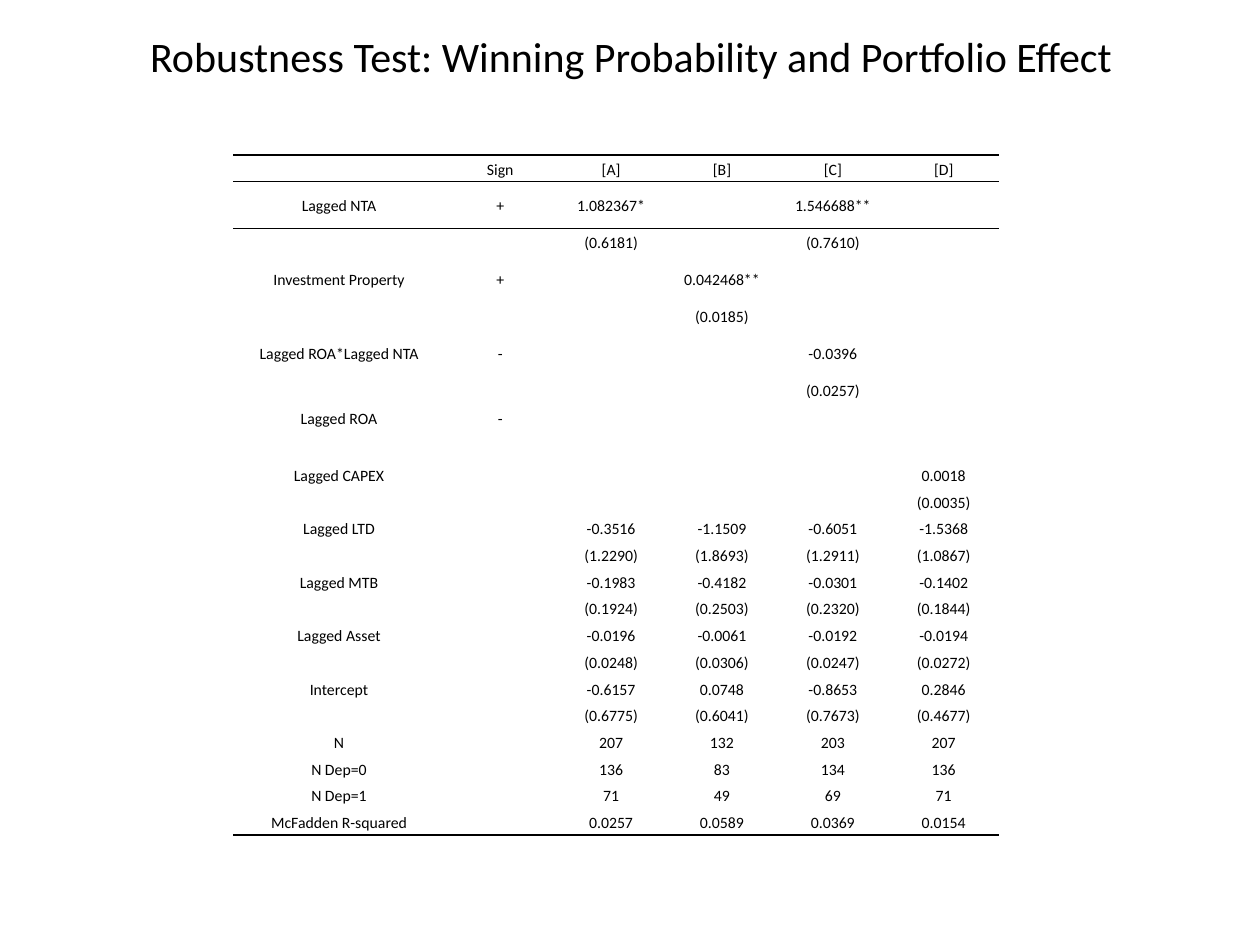
from dataclasses import dataclass

from lxml.etree import SubElement
from pptx import Presentation
from pptx.dml.color import RGBColor
from pptx.enum.text import MSO_ANCHOR as Anchor, PP_ALIGN as Align
from pptx.oxml.ns import qn
from pptx.util import Inches, Pt

W, H = Inches(10), Inches(7.5)
FONT, BLACK = "Calibri", "000000"
NO_STYLE = "{2D5ABB26-0587-4C30-8999-92F81FD0307C}"
COLS = (1.68, 0.88, 0.88, 0.88, 0.88, 0.88)
TABLE_HEIGHT = Inches(5.4)
TALL, MEDIUM = 1.76, 1.1


@dataclass
class Row:
    """One table row; height is a multiple of the regular row."""
    label: str = ""
    sign: str = ""
    values: tuple = ("", "", "", "")
    height: float = 1

    def cells(self) -> tuple:
        """Return the row's texts from left to right."""
        return (self.label, self.sign, *self.values)


ROWS = [
    Row("", "Sign", ("[A]", "[B]", "[C]", "[D]")),
    Row("Lagged NTA", "+", ("1.082367*", "", "1.546688**", ""), TALL),
    Row(values=("(0.6181)", "", "(0.7610)", "")),
    Row("Investment Property", "+", ("", "0.042468**", "", ""), TALL),
    Row(values=("", "(0.0185)", "", "")),
    Row("Lagged ROA*Lagged NTA", "-", ("", "", "-0.0396", ""), TALL),
    Row(values=("", "", "(0.0257)", "")),
    Row("Lagged ROA", "-", height=MEDIUM),
    Row(height=MEDIUM),
    Row("Lagged CAPEX", "", ("", "", "", "0.0018")),
    Row(values=("", "", "", "(0.0035)")),
    Row("Lagged LTD", "", ("-0.3516", "-1.1509", "-0.6051", "-1.5368")),
    Row(values=("(1.2290)", "(1.8693)", "(1.2911)", "(1.0867)")),
    Row("Lagged MTB", "", ("-0.1983", "-0.4182", "-0.0301", "-0.1402")),
    Row(values=("(0.1924)", "(0.2503)", "(0.2320)", "(0.1844)")),
    Row("Lagged Asset", "", ("-0.0196", "-0.0061", "-0.0192", "-0.0194")),
    Row(values=("(0.0248)", "(0.0306)", "(0.0247)", "(0.0272)")),
    Row("Intercept", "", ("-0.6157", "0.0748", "-0.8653", "0.2846")),
    Row(values=("(0.6775)", "(0.6041)", "(0.7673)", "(0.4677)")),
    Row("N", "", ("207", "132", "203", "207")),
    Row("N Dep=0", "", ("136", "83", "134", "136")),
    Row("N Dep=1", "", ("71", "49", "69", "71")),
    Row("McFadden R-squared", "", ("0.0257", "0.0589", "0.0369", "0.0154")),
]


def rgb(value: str) -> RGBColor:
    """Turn a hex string into a colour."""
    return RGBColor.from_string(value)


def format_text(tf, size: float) -> None:
    """Centre the text of a frame and set its font."""
    for p in tf.paragraphs:
        p.alignment = Align.CENTER
        for r in p.runs:
            r.font.name, r.font.size, r.font.bold = FONT, Pt(size), False
            r.font.color.rgb = rgb(BLACK)


def add_border(cell, side: str) -> None:
    """Rule one side of a cell; side is T or B."""
    ln = SubElement(cell._tc.get_or_add_tcPr(), qn(f"a:ln{side}"), w=str(Pt(1)))
    SubElement(SubElement(ln, qn("a:solidFill")), qn("a:srgbClr"), val=BLACK)


def fill_cell(cell, text: str, sides: str, size: float = 9) -> None:
    """Write and format one cell with rules on the given sides."""
    cell.text = text
    cell.vertical_anchor = Anchor.MIDDLE
    cell.margin_left = cell.margin_right = Inches(0.07)
    cell.margin_top = cell.margin_bottom = 0
    format_text(cell.text_frame, size)
    p = cell.text_frame.paragraphs[0]
    p.line_spacing = 1.15
    if not text:
        SubElement(p._p, qn("a:endParaRPr"), sz=str(int(size * 100)))
    for side in sides:
        add_border(cell, side)
    cell.fill.background()


def rules_for(row: int) -> str:
    """Return the ruled sides of a row: header, first body row and last."""
    return {0: "TB", 1: "T", len(ROWS) - 1: "B"}.get(row, "")


def add_results(s) -> None:
    """Draw the regression table."""
    width = Inches(sum(COLS))
    sp = s.shapes.add_table(len(ROWS), len(COLS), int(W * 0.185),
                            int(H * 0.164), width, TABLE_HEIGHT)
    table = sp.table
    table.first_row = table.horz_banding = False
    table._tbl.tblPr.find(qn("a:tableStyleId")).text = NO_STYLE
    for column, share in zip(table.columns, COLS):
        column.width = Inches(share)
    unit = TABLE_HEIGHT / sum(row.height for row in ROWS)
    for i, row in enumerate(ROWS):
        table.rows[i].height = int(unit * row.height)
        for j, text in enumerate(row.cells()):
            fill_cell(table.cell(i, j), text, rules_for(i))


def add_title(s, text: str) -> None:
    """Place and format the slide title."""
    sp = s.shapes.title
    sp.left, sp.top = int(W * 0.051), int(H * 0.028)
    sp.width, sp.height = int(W * 0.9), Inches(0.47)
    tf = sp.text_frame
    tf.text = text
    tf.vertical_anchor = Anchor.MIDDLE
    format_text(tf, 24)


def main() -> None:
    """Build and save the slide."""
    prs = Presentation()
    prs.slide_width, prs.slide_height = W, H
    s = prs.slides.add_slide(prs.slide_layouts[5])
    add_title(s, "Robustness Test: Winning Probability and Portfolio Effect")
    add_results(s)
    prs.save("out.pptx")


if __name__ == "__main__":
    main()
